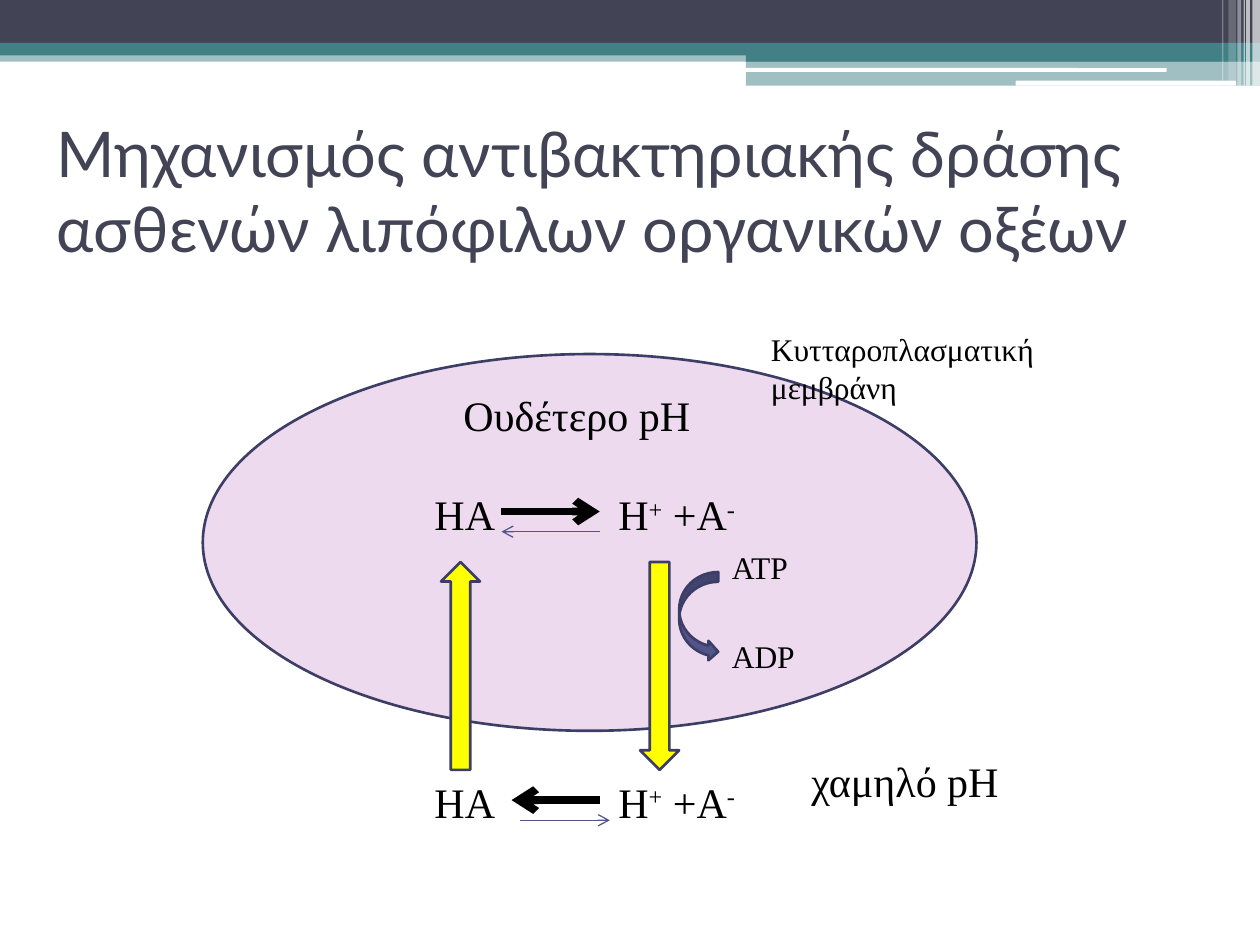
import lxml.etree
import pptx
import pptx.dml.color
import pptx.enum.shapes
import pptx.enum.text
import pptx.oxml.ns
import pptx.util

RGBColor = pptx.dml.color.RGBColor
Shape = pptx.enum.shapes.MSO_SHAPE
qn = pptx.oxml.ns.qn

SLATE = RGBColor(0x42, 0x44, 0x56)
TEAL = RGBColor(0x43, 0x80, 0x86)
WHITE = RGBColor(0xFF, 0xFF, 0xFF)
BLACK = RGBColor(0, 0, 0)
LILAC = RGBColor(0xED, 0xDA, 0xEE)
YELLOW = RGBColor(0xFF, 0xFF, 0)
INDIGO = RGBColor(0x53, 0x54, 0x8A)
OUTLINE = RGBColor(0x3D, 0x3E, 0x66)

EMU_PER_PX = 9144


def px(*lengths):
    return [pptx.util.Emu(length * EMU_PER_PX) for length in lengths]


class SlideBuilder:
    """Holds the text style and the current slide, and adds each kind of element."""

    def __init__(self, slide, body_font, title_font):
        self.slide = slide
        self.body_font = body_font
        self.title_font = title_font

    def style(self, font, **formats):
        color = formats.pop("color")
        for name, value in formats.items():
            setattr(font, name, value)
        font.color.rgb = color

    def title(self, box, wording):
        heading = self.slide.shapes.title
        for side, length in zip(("left", "top", "width", "height"), px(*box)):
            setattr(heading, side, length)
        frame = heading.text_frame
        formats = {
            "word_wrap": True,
            "auto_size": pptx.enum.text.MSO_AUTO_SIZE.NONE,
            "vertical_anchor": pptx.enum.text.MSO_ANCHOR.MIDDLE,
        }
        for name, value in formats.items():
            setattr(frame, name, value)
        paragraph = frame.paragraphs[0]
        paragraph.alignment = pptx.enum.text.PP_ALIGN.LEFT
        run = paragraph.add_run()
        run.text = wording
        self.style(run.font, name=self.title_font, size=pptx.util.Pt(36), color=SLATE)

    def shape(self, kind, box, fill, opacity=100, outline=None):
        figure = self.slide.shapes.add_shape(kind, *px(*box))
        figure.shadow.inherit = False
        figure.fill.solid()
        figure.fill.fore_color.rgb = fill
        if opacity < 100:
            tint = figure.fill._xPr.find(".//" + qn("a:srgbClr"))
            lxml.etree.SubElement(tint, qn("a:alpha"), val=str(opacity * 1000))
        if outline is None:
            figure.line.fill.background()
        else:
            figure.line.color.rgb = outline
            figure.line.width = pptx.util.Pt(1.5)

    def text(self, box, pieces, size, tab=None):
        label = self.slide.shapes.add_textbox(*px(*box))
        frame = label.text_frame
        frame.word_wrap = True
        frame.auto_size = pptx.enum.text.MSO_AUTO_SIZE.SHAPE_TO_FIT_TEXT
        paragraph = frame.paragraphs[0]
        if tab:
            stops = lxml.etree.SubElement(paragraph._p.get_or_add_pPr(), qn("a:tabLst"))
            lxml.etree.SubElement(stops, qn("a:tab"), pos=str(px(tab)[0]), algn="l")
        for wording in pieces:
            run = paragraph.add_run()
            run.text = wording
            self.style(run.font, name=self.body_font, size=pptx.util.Pt(size), color=BLACK)
            if wording in ("+", "-"):
                run._r.get_or_add_rPr().set("baseline", "30000")

    def arrow(self, start, end, y, color, weight):
        connector = self.slide.shapes.add_connector(
            pptx.enum.shapes.MSO_CONNECTOR.STRAIGHT, *px(start, y, end, y))
        connector.line.color.rgb = color
        connector.line.width = pptx.util.Pt(weight)
        lxml.etree.SubElement(connector.line._get_or_add_ln(), qn("a:tailEnd"), type="arrow")
        lxml.etree.SubElement(connector._element.spPr, qn("a:effectLst"))


def draw_banner(builder):
    for box, fill, opacity in (
        ((0, 40, 1000, 9), TEAL, 50),
        ((0, 0, 1000, 34), SLATE, 100),
        ((0, 34, 1000, 10), TEAL, 100),
        ((592, 39, 408, 10), TEAL, 100),
        ((592, 48, 408, 20), TEAL, 50),
    ):
        builder.shape(Shape.RECTANGLE, box, fill, opacity)
    for box in ((591, 54, 335, 3), (806, 64, 175, 4)):
        builder.shape(Shape.ROUNDED_RECTANGLE, box, WHITE)
    for left, width, height, opacity in (
        (994, 6, 68, 65), (989, 3, 68, 65), (987, 1, 68, 60),
        (982, 3, 68, 40), (975, 6, 64, 20), (970, 1, 64, 30),
    ):
        builder.shape(Shape.RECTANGLE, (left, 0, width, height), WHITE, opacity)


def draw_cell(builder):
    builder.shape(Shape.OVAL, (161, 281, 614, 299), LILAC, outline=OUTLINE)
    for top in (383, 611):
        builder.text((335, top, 276, 50), ("ΗΑ\tΗ", "+", " +Α", "-"), 24, tab=146)
    for start, end, y, color, weight in (
        (398, 476, 406, BLACK, 4.5), (476, 398, 422, INDIGO, 0.75),
        (476, 406, 635, BLACK, 4.5), (413, 484, 651, INDIGO, 0.75),
    ):
        builder.arrow(start, end, y, color, weight)
    for kind, left in ((Shape.UP_ARROW, 350), (Shape.DOWN_ARROW, 508)):
        builder.shape(kind, (left, 446, 31, 165), YELLOW, outline=OUTLINE)
    for box, wording, size in (
        ((358, 304, 205, 50), "Ουδέτερο pH", 24),
        ((634, 595, 205, 50), "χαμηλό pH", 24),
        ((602, 257, 299, 71), "Κυτταροπλασματική μεμβράνη", 18),
        ((571, 430, 94, 40), "ATP", 18),
        ((571, 501, 94, 40), "ADP", 18),
    ):
        builder.text(box, (wording,), size)
    builder.shape(Shape.CURVED_RIGHT_ARROW, (539, 454, 31, 71), INDIGO, outline=OUTLINE)


def main():
    deck = pptx.Presentation()
    deck.slide_width, deck.slide_height = px(1000, 750)
    slide = deck.slides.add_slide(deck.slide_layouts.get_by_name("Title Only"))
    builder = SlideBuilder(slide, "Times New Roman", "Lato")
    draw_banner(builder)
    builder.title((35, 92, 900, 117),
                  "Μηχανισμός αντιβακτηριακής δράσης ασθενών λιπόφιλων οργανικών οξέων")
    draw_cell(builder)
    deck.save("out.pptx")


if __name__ == "__main__":
    main()
